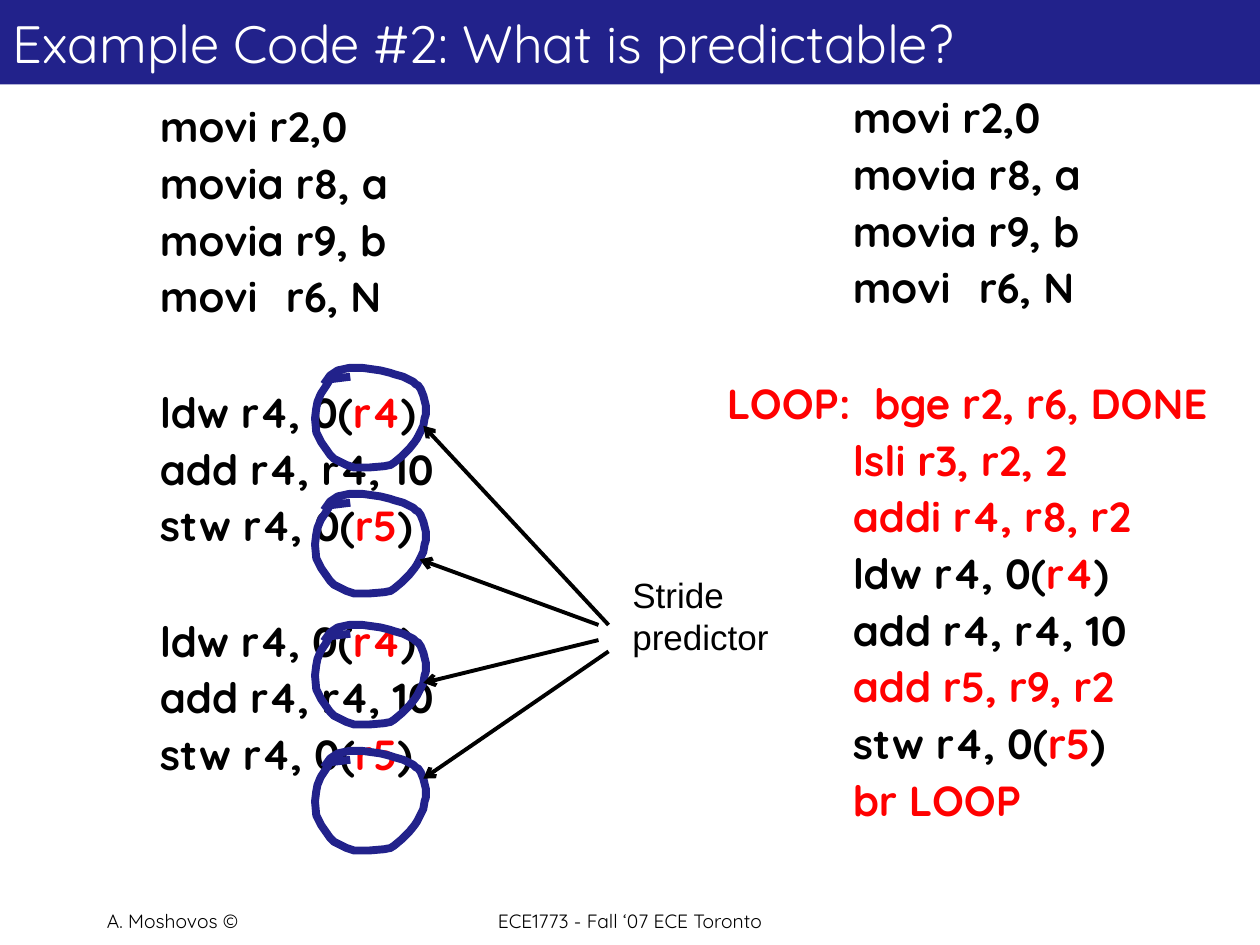
from pptx import Presentation
from pptx.dml.color import RGBColor
from pptx.enum.shapes import MSO_CONNECTOR as Connector, MSO_SHAPE as Shape
from pptx.enum.text import MSO_ANCHOR as Anchor, PP_ALIGN as Align
from pptx.oxml.ns import qn
from pptx.util import Inches, Pt
from lxml.etree import SubElement

NAVY, BLACK, RED, WHITE = "22228B", "000000", "FF0000", "FFFFFF"
FONT = "Quicksand"

# Content: "|" switches between black and red; "" leaves a line free
TITLE = "Example Code #2: What is predictable?"
SETUP = ["\tmovi r2,0", "\tmovia r8, a", "\tmovia r9, b", "\tmovi\tr6, N", ""]
LOAD, ADD, STORE = "\tldw r4, 0(|r4|)", "\tadd r4, r4, 10", "\tstw r4, 0(|r5|)"
BODY = [LOAD, ADD, STORE]
UNROLLED = SETUP + BODY + [""] + BODY
LOOP = SETUP + ["|LOOP:  bge r2, r6, DONE", "|\tlsli r3, r2, 2",
                "|\taddi r4, r8, r2", LOAD, ADD, "\t|add r5, r9, r2",
                STORE, "\t|br LOOP"]
LISTINGS = [((0.17, 0.75, 5.25, 6.42), UNROLLED),
            ((5.67, 0.68, 4.5, 6.42), LOOP)]
FOOTERS = [((0.75, 7.17, 2.08, 0.42), "A. Moshovos ©", Align.LEFT),
           ((3.25, 7.17, 3.5, 0.42), "ECE1773 - Fall ‘07 ECE Toronto", Align.CENTER)]
LABEL = ["Stride", "predictor"]

# Hand-drawn ring in hundredths of an inch, from its own left and top
RING_LEFT, RING_TOPS = 250, [392, 292, 496, 596]
RING = [(28, 7), (20, 8), (12, 9), (9, 14), (5, 20), (4, 22), (2, 27), (1, 32),
        (0, 40), (1, 51), (4, 57), (5, 59), (12, 69), (15, 72), (25, 77),
        (31, 79), (43, 79), (55, 78), (60, 77), (63, 75), (69, 70), (75, 64),
        (79, 59), (81, 56), (83, 52), (86, 46), (87, 40), (88, 37), (88, 30),
        (86, 22), (84, 17), (82, 14), (80, 13), (78, 11), (70, 7), (63, 5),
        (60, 4), (52, 2), (45, 1), (38, 0), (27, 0), (18, 2), (15, 4),
        (12, 6), (7, 13)]
ARROWS = [((4.83, 4.96), (3.36, 3.38)), ((4.75, 4.96), (3.33, 4.44)),
          ((4.75, 5.08), (3.36, 5.42)), ((4.83, 5.17), (3.36, 6.18))]

# Code line metrics in points
CODE_SIZE, LINE_HEIGHT, LINE_GAP = 24, 30, 3.6


def colour(value):
    return RGBColor.from_string(value)


def add_run(paragraph, text, size, ink=BLACK, font=FONT, bold=False):
    run = paragraph.add_run()
    run.text = text
    run.font.name, run.font.size, run.font.bold = font, Pt(size), bold
    run.font.color.rgb = colour(ink)


def add_text_box(slide, box, wrap=True):
    frame = slide.shapes.add_textbox(*map(Inches, box)).text_frame
    frame.word_wrap = wrap
    return frame


def set_tabs(paragraph):
    tabs = SubElement(paragraph._p.get_or_add_pPr(), qn("a:tabLst"))
    for stop in (1, 2):
        SubElement(tabs, qn("a:tab"), pos=str(Inches(stop)), algn="l")


def add_listing(slide, box, lines):
    frame = add_text_box(slide, box)
    paragraph, gap = frame.paragraphs[0], 0
    for index, line in enumerate(lines):
        if not line:
            gap += LINE_HEIGHT + LINE_GAP
            continue
        if index:
            paragraph = frame.add_paragraph()
        paragraph.space_before = Pt(gap)
        set_tabs(paragraph)
        for part, text in enumerate(line.split("|")):
            if text:
                add_run(paragraph, text, CODE_SIZE, (BLACK, RED)[part % 2], bold=True)
        gap = LINE_GAP


def add_ring(slide, top):
    points = [(RING_LEFT + x, top + y) for x, y in RING]
    builder = slide.shapes.build_freeform(*points[0], scale=Inches(0.01))
    builder.add_line_segments(points[1:], close=False)
    ring = builder.convert_to_shape()
    ring.shadow.inherit = False
    ring.fill.background()
    ring.line.color.rgb, ring.line.width = colour(NAVY), Pt(4.5)
    SubElement(ring.line._get_or_add_ln(), qn("a:round"))


def add_arrow(slide, start, end):
    arrow = slide.shapes.add_connector(Connector.STRAIGHT, *map(Inches, start + end))
    arrow.line.color.rgb, arrow.line.width = colour(BLACK), Pt(2.25)
    SubElement(arrow.line._get_or_add_ln(), qn("a:tailEnd"), type="arrow")
    SubElement(arrow._element.spPr, qn("a:effectLst"))


def main():
    presentation = Presentation()
    presentation.slide_width, presentation.slide_height = Inches(10), Inches(7.5)
    slide = presentation.slides.add_slide(presentation.slide_layouts[6])

    # Title bar
    bar = slide.shapes.add_shape(Shape.RECTANGLE, 0, 0, Inches(10), Inches(0.67))
    bar.shadow.inherit = False
    bar.fill.solid()
    bar.fill.fore_color.rgb = colour(NAVY)
    bar.line.fill.background()
    bar.text_frame.vertical_anchor = Anchor.MIDDLE
    heading = bar.text_frame.paragraphs[0]
    heading.alignment = Align.LEFT
    add_run(heading, TITLE, 30, WHITE)

    # Code listings and footers
    for box, lines in LISTINGS:
        add_listing(slide, box, lines)
    for box, text, alignment in FOOTERS:
        paragraph = add_text_box(slide, box).paragraphs[0]
        paragraph.alignment = alignment
        add_run(paragraph, text, 11)

    # Rings, arrows and their label
    for top in RING_TOPS:
        add_ring(slide, top)
    for start, end in ARROWS:
        add_arrow(slide, start, end)
    paragraph = add_text_box(slide, (4.92, 4.5, 1.29, 0.77), wrap=False).paragraphs[0]
    for index, word in enumerate(LABEL):
        if index:
            paragraph.add_line_break()
        add_run(paragraph, word, 20, font="Arial")

    presentation.save("out.pptx")


if __name__ == "__main__":
    main()
